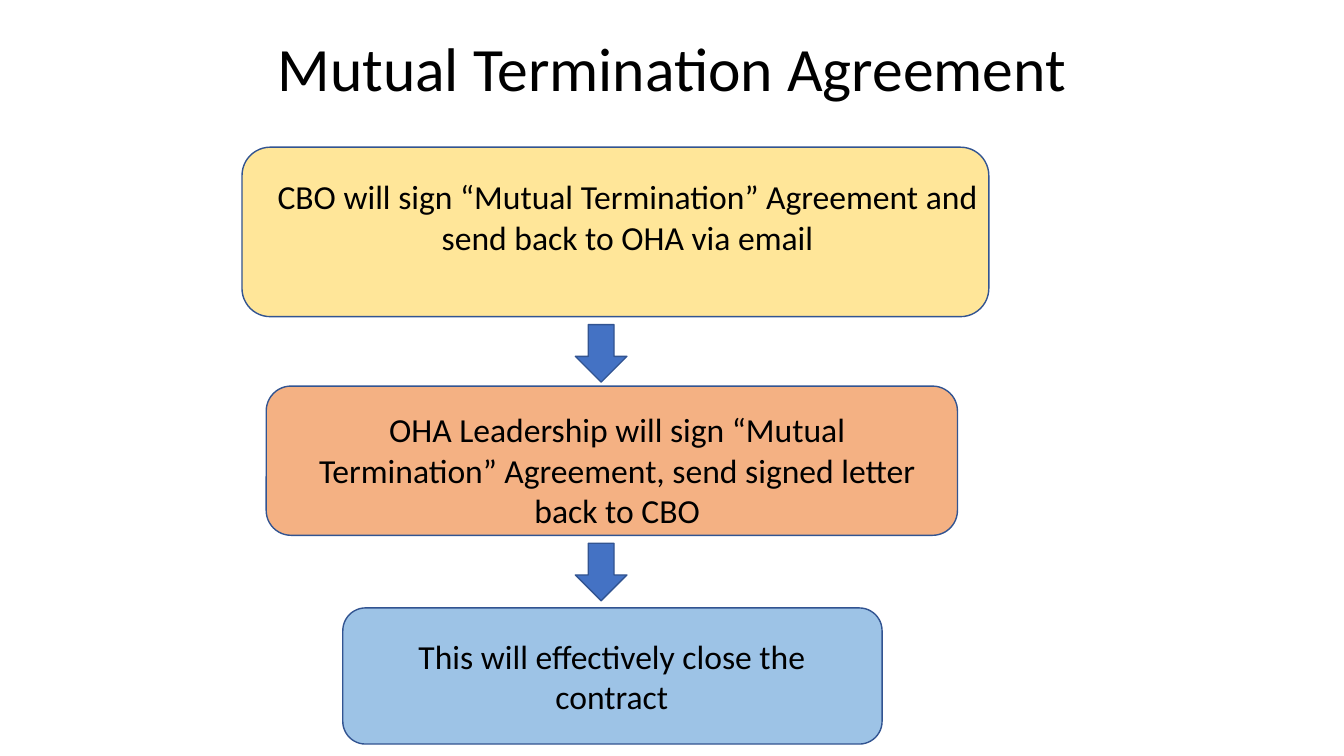
from dataclasses import dataclass

from pptx import Presentation
from pptx.dml.color import RGBColor
from pptx.enum.shapes import MSO_SHAPE
from pptx.enum.text import MSO_ANCHOR, PP_ALIGN
from pptx.slide import Slide
from pptx.util import Cm, Pt

HUES = {
    "ink": "000000",
    "edge": "325491",
    "arrow": "4472C4",
    "yellow": "FFE699",
    "orange": "F4B183",
    "blue": "9DC3E6",
}


@dataclass(frozen=True)
class Area:
    left: float
    top: float
    width: float
    height: float

    def size(self) -> tuple[Cm, Cm, Cm, Cm]:
        return Cm(self.left), Cm(self.top), Cm(self.width), Cm(self.height)


@dataclass(frozen=True)
class Step:
    box: Area
    label: Area
    hue: str
    words: str


STEPS = [
    Step(Area(6.1, 3.71, 18.82, 4.27), Area(6.71, 4.32, 18.21, 3.07), "yellow",
         "CBO will sign “Mutual Termination” Agreement and send back to OHA via email"),
    Step(Area(6.71, 9.73, 17.42, 3.76), Area(7.72, 10.19, 15.67, 3.33), "orange",
         "OHA Leadership will sign “Mutual Termination” Agreement, send signed letter back to CBO"),
    Step(Area(8.64, 15.32, 13.59, 3.43), Area(9.07, 15.9, 12.7, 2.31), "blue",
         "This will effectively close the contract"),
]
ARROWS = [Area(14.5, top, 1.3, 1.45) for top in (8.18, 13.69)]


def add_text(slide: Slide, area: Area, words: str, *, size: float = 24,
             anchor: MSO_ANCHOR = MSO_ANCHOR.TOP, spacing: float = 1.0) -> None:
    frame = slide.shapes.add_textbox(*area.size()).text_frame
    frame.word_wrap = True
    frame.vertical_anchor = anchor
    para = frame.paragraphs[0]
    para.alignment = PP_ALIGN.CENTER
    para.line_spacing = spacing
    run = para.add_run()
    run.text = words
    run.font.name = "Calibri"
    run.font.size = Pt(size)
    run.font.color.rgb = RGBColor.from_string(HUES["ink"])


def add_block(slide: Slide, kind: MSO_SHAPE, area: Area, hue: str) -> None:
    block = slide.shapes.add_shape(kind, *area.size())
    block.shadow.inherit = False
    block.fill.solid()
    block.fill.fore_color.rgb = RGBColor.from_string(HUES[hue])
    block.line.color.rgb = RGBColor.from_string(HUES["edge"])
    block.line.width = Pt(1)


def main() -> None:
    deck = Presentation()
    deck.slide_width, deck.slide_height = Cm(33.87), Cm(19.05)
    slide = deck.slides.add_slide(deck.slide_layouts[6])
    add_text(slide, Area(2.34, 0.46, 29.21, 2.67), "Mutual Termination Agreement",
             size=44, anchor=MSO_ANCHOR.MIDDLE, spacing=0.9)
    for step in STEPS:
        add_block(slide, MSO_SHAPE.ROUNDED_RECTANGLE, step.box, step.hue)
        add_text(slide, step.label, step.words)
    for arrow in ARROWS:
        add_block(slide, MSO_SHAPE.DOWN_ARROW, arrow, "arrow")
    deck.save("out.pptx")


if __name__ == "__main__":
    main()
